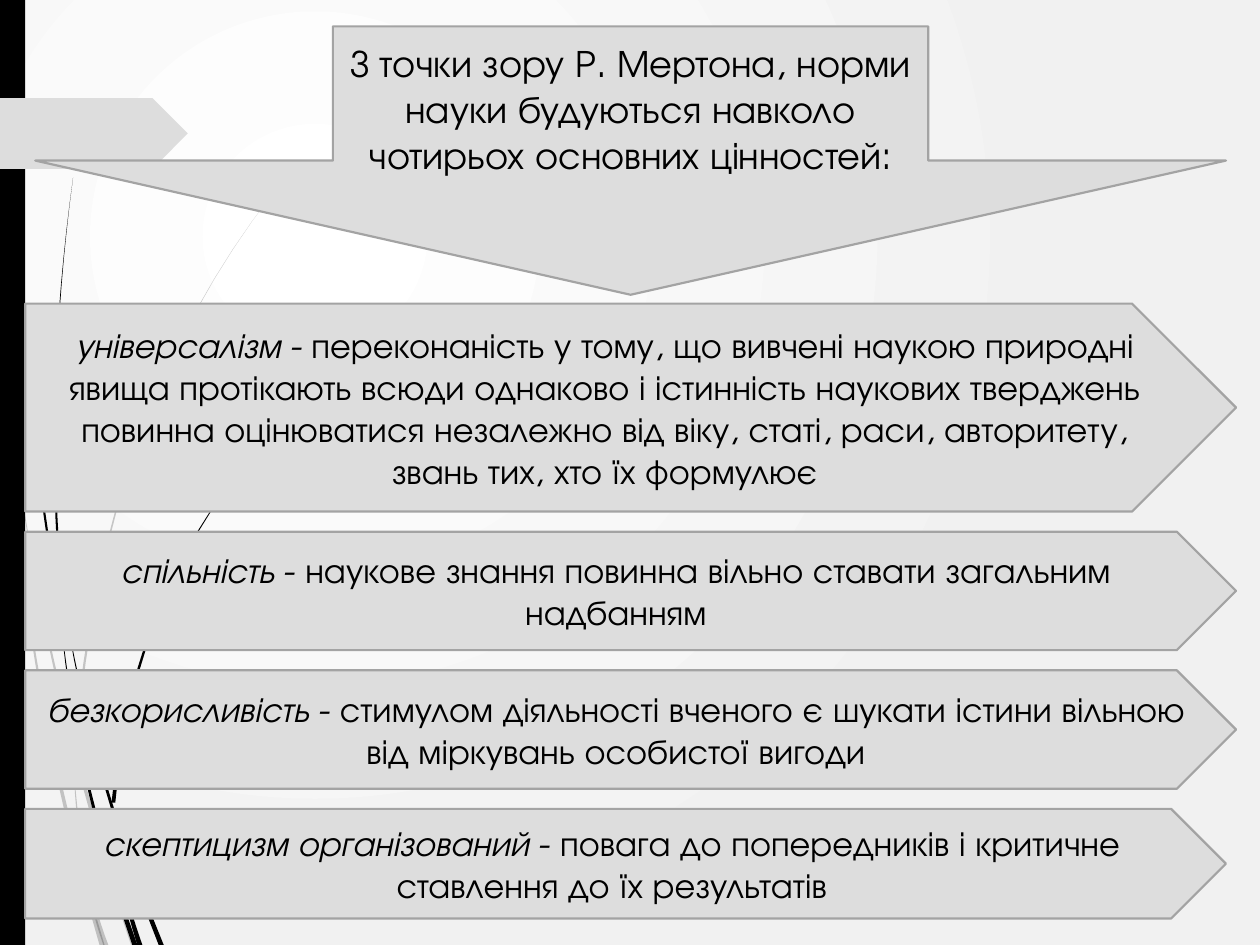
from lxml import etree
from pptx import Presentation
from pptx.dml.color import RGBColor
from pptx.enum.shapes import MSO_SHAPE
from pptx.enum.text import MSO_ANCHOR, PP_ALIGN
from pptx.oxml.ns import qn
from pptx.util import Inches, Pt

RECT, DOWN, PLATE = MSO_SHAPE.RECTANGLE, MSO_SHAPE.DOWN_ARROW, MSO_SHAPE.PENTAGON
MIDDLE, CENTER = MSO_ANCHOR.MIDDLE, PP_ALIGN.CENTER
FONT = "TeX Gyre Adventor"
BLACK, GREY, EDGE = "000000", "DDDDDD", "A3A3A3"
WIDE, HIGH = 10, 7.5

# Content
TITLE = "З точки зору Р. Мертона, норми науки будуються навколо чотирьох основних цінностей:"
NORMS = [  # term, meaning, width, height
    ("універсалізм -", " переконаність у тому, що вивчені наукою природні явища протікають "
     "всюди однаково і істинність наукових тверджень повинна оцінюватися незалежно від віку, "
     "статі, раси, авторитету, звань тих, хто їх формулює", 9.61, 1.65),
    ("спільність -", " наукове знання повинна вільно ставати загальним надбанням", 9.61, 0.94),
    ("безкорисливість -", " стимулом діяльності вченого є шукати істини вільною від міркувань "
     "особистої вигоди", 9.61, 0.94),
    ("скептицизм організований -", " повага до попередників і критичне ставлення до їх "
     "результатів", 9.53, 0.87),
]
LEFT, TOP, GAP = 0.2, 2.41, 0.16

# Grass: each blade is a tip, a point halfway, a foot, and the width at the foot
PALE = [
    ((0, 2.85), (0.03, 3.15), (0.08, 3.5), 0.02),
    ((0.1, 3.45), (0.48, 5.5), (1.06, HIGH), 0.04),
    ((0.08, 3.5), (0.33, 5.5), (0.81, HIGH), 0.04),
    ((0.58, 5.95), (0.66, 6.8), (0.84, HIGH), 0.04),
    ((2.17, 1.53), (1.1, 3.49), (0.6, 5.9), 0.02),
]
DARK = [
    ((0.02, 0), (0.15, 2.4), (0.47, 4.81), 0.02),
    ((0.58, 1.41), (0.44, 3.1), (0.49, 4.72), 0.02),
    ((0.5, 4.72), (0.8, 6.1), (1.28, HIGH), 0.04),
    ((0.47, 4.77), (0.67, 6.1), (1.07, HIGH), 0.04),
    ((0.88, 6.4), (0.96, 6.95), (1.11, HIGH), 0.04),
    ((2.16, 3.44), (1.3, 4.75), (0.9, 6.37), 0.03),
]
STEPS = 16  # straight pieces along each side of a blade

prs = Presentation()
prs.slide_width, prs.slide_height = Inches(WIDE), Inches(HIGH)
slide = prs.slides.add_slide(prs.slide_layouts[6])
shapes = slide.shapes


def color(code):
    return RGBColor.from_string(code)


def paint(shape, fill, line=None):
    shape.shadow.inherit = False
    shape.fill.solid()
    shape.fill.fore_color.rgb = color(fill)
    if line:
        shape.line.color.rgb = color(line)
        shape.line.width = Pt(1.25)
    else:
        shape.line.fill.background()
    return shape


def block(kind, box, fill, line=None):
    return paint(shapes.add_shape(kind, *map(Inches, box)), fill, line)


def along(tip, half, foot, t):
    """Value at t on the parabola that runs tip (0), half (0.5), foot (1)."""
    bend = 2 * half - (tip + foot) / 2
    return (1 - t) ** 2 * tip + 2 * t * (1 - t) * bend + t ** 2 * foot


def grow(tip, half, foot, width):
    """Draw a curved blade that widens evenly from its tip to its foot."""
    near, far = [], []
    for step in range(STEPS + 1):
        t = step / STEPS
        x, y = (along(a, b, c, t) for a, b, c in zip(tip, half, foot))
        side = width * t / 2
        near.append((Inches(x - side), Inches(y)))
        far.append((Inches(x + side), Inches(y)))
    rim = near + far[::-1]
    form = shapes.build_freeform(*rim[0])
    form.add_line_segments(rim[1:], close=True)
    return paint(form.convert_to_shape(), BLACK)


def fade(shape, percent):
    tint = next(shape.element.spPr.iter(qn("a:srgbClr")))
    etree.SubElement(tint, qn("a:alpha"), val=str(percent * 1000))


def write(shape, size, parts):
    frame = shape.text_frame
    frame.word_wrap = True
    frame.vertical_anchor = MIDDLE
    para = frame.paragraphs[0]
    para.alignment = CENTER
    para.font.name, para.font.size = FONT, Pt(size)
    para.font.color.rgb = color(BLACK)
    for text, slant in parts:
        run = para.add_run()
        run.text = text
        run.font.italic = slant
    return frame


# Background: round gradient centred in the upper left quarter
back = slide.background.fill
back.gradient()
for stop, code, place in zip(back.gradient_stops, ("FFFFFF", "F1F1F1"), (0, 1)):
    stop.color.rgb = color(code)
    stop.position = place
grad = next(slide.element.iter(qn("a:gradFill")))
grad.remove(grad.find(qn("a:lin")))
ring = etree.SubElement(grad, qn("a:path"), path="circle")
etree.SubElement(ring, qn("a:fillToRect"), l="50000", t="50000", r="100000", b="100000")

# Grass, side bar and page tag
for blade in PALE:
    fade(grow(*blade), 20)
for blade in DARK:
    grow(*blade)
block(RECT, (0, 0, LEFT, HIGH), BLACK)
block(PLATE, (0, 0.78, 1.49, 0.56), GREY)

# Title arrow, its text raised by a deep lower margin
head = block(DOWN, (0.28, 0.21, 9.45, 2.13), GREY, EDGE)
write(head, 22, [(TITLE, False)]).margin_bottom = Inches(0.35)

# Norms, stacked with equal gaps
top = TOP
for term, sense, width, height in NORMS:
    plate = block(PLATE, (LEFT, top, width, height), GREY, EDGE)
    write(plate, 20, [(term, True), (sense, False)])
    top += height + GAP

prs.save("out.pptx")
